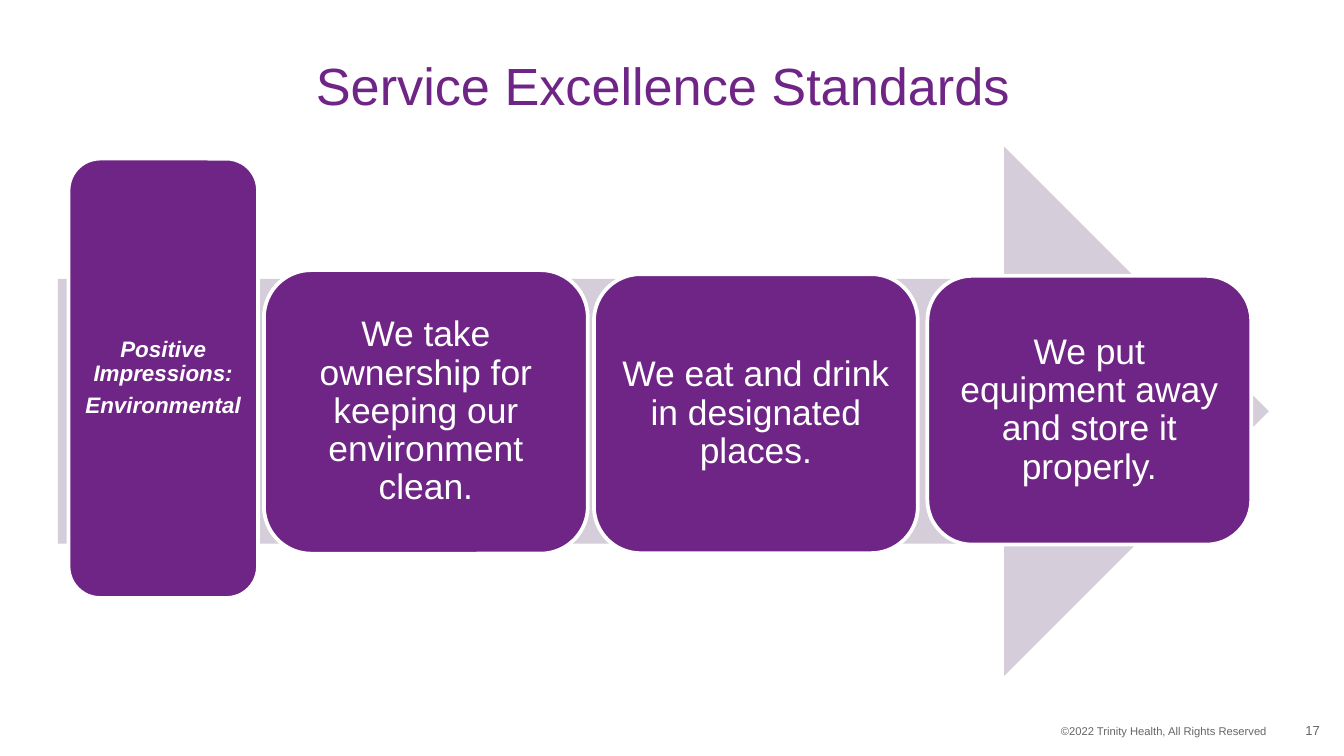
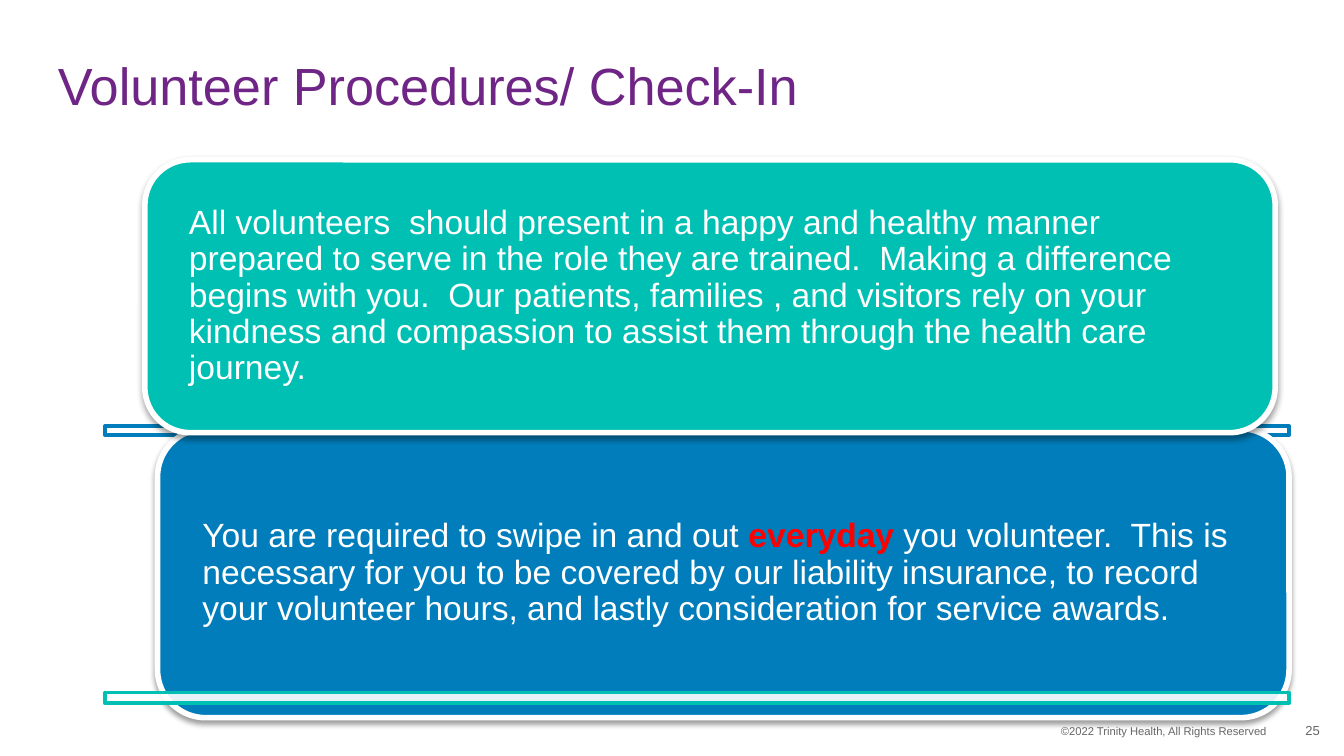
from dataclasses import dataclass

from lxml.etree import SubElement
from pptx import Presentation
from pptx.dml.color import RGBColor
from pptx.enum.shapes import MSO_SHAPE
from pptx.enum.text import MSO_ANCHOR, PP_ALIGN
from pptx.oxml.ns import qn
from pptx.util import Pt

FONT = "Arial"
PURPLE, LILAC, TEAL, BLUE = "6E2585", "D5CDD9", "00BFB3", "007DBA"
WHITE, GRAY, RED = "FFFFFF", "666666", "FF0000"


@dataclass
class Box:
    left: float
    top: float
    width: float
    height: float

    def lengths(self) -> tuple:
        return Pt(self.left), Pt(self.top), Pt(self.width), Pt(self.height)


@dataclass
class Style:
    size: float
    color: str = WHITE
    align: PP_ALIGN = PP_ALIGN.LEFT
    spacing: float = 1.0
    after: float = 0
    bold: bool = False
    italic: bool = False
    margins: tuple = (7.2, 3.6, 7.2, 3.6)
    anchor: MSO_ANCHOR = MSO_ANCHOR.MIDDLE


@dataclass
class Card:
    box: Box
    paragraphs: list
    style: Style
    fill: str = PURPLE
    border: float = 2
    shadow: bool = False


def rgb(value: str) -> RGBColor:
    return RGBColor.from_string(value)


def write(sp, paragraphs: list, style: Style) -> None:
    """Each paragraph is a string; parts between asterisks are stressed."""
    tf = sp.text_frame
    tf.word_wrap = True
    tf.vertical_anchor = style.anchor
    tf.margin_left, tf.margin_top, tf.margin_right, tf.margin_bottom = map(Pt, style.margins)
    for i, text in enumerate(paragraphs):
        p = tf.add_paragraph() if i else tf.paragraphs[0]
        p.alignment = style.align
        p.line_spacing = style.spacing
        p.space_after = Pt(style.after)
        p.font.name, p.font.size = FONT, Pt(style.size)
        p.font.bold, p.font.italic = style.bold, style.italic
        p.font.color.rgb = rgb(style.color)
        for j, part in enumerate(text.split("*")):
            r = p.add_run()
            r.text = part
            if j % 2:
                r.font.bold = True
                r.font.color.rgb = rgb(RED)


def add_text(s, box: Box, text: str, style: Style) -> None:
    write(s.shapes.add_textbox(*box.lengths()), [text], style)


def add_block(s, kind: MSO_SHAPE, box: Box, fill: str, line: str = "", weight: float = 2):
    sp = s.shapes.add_shape(kind, *box.lengths())
    sp.shadow.inherit = False
    sp.fill.solid()
    sp.fill.fore_color.rgb = rgb(fill)
    if line:
        sp.line.color.rgb = rgb(line)
        sp.line.width = Pt(weight)
    else:
        sp.line.fill.background()
    return sp


def set_alpha(color, percent: int) -> None:
    SubElement(color, qn("a:alpha"), val=str(percent * 1000))


def add_card(s, card: Card) -> None:
    sp = add_block(s, MSO_SHAPE.ROUNDED_RECTANGLE, card.box, card.fill, WHITE, card.border)
    write(sp, card.paragraphs, card.style)
    if card.shadow:
        effects = sp._element.spPr.find(qn("a:effectLst"))
        outer = SubElement(effects, qn("a:outerShdw"), blurRad=str(Pt(3.1)),
                           dist=str(Pt(1.6)), dir="5400000", rotWithShape="0")
        set_alpha(SubElement(outer, qn("a:srgbClr"), val="000000"), 38)


def add_bar(s, top: float, height: float, color: str) -> None:
    sp = add_block(s, MSO_SHAPE.RECTANGLE, Box(56.2, top, 634.3, height), WHITE, color)
    set_alpha(sp._element.spPr.find(qn("a:solidFill"))[0], 90)


def add_slide(prs, title: str, number: int, align: PP_ALIGN):
    """A blank slide with the shared title, copyright line and number."""
    s = prs.slides.add_slide(prs.slide_layouts[6])
    add_text(s, Box(31, 27.4, 648, 39.6), title,
             Style(28, PURPLE, align, 0.9, margins=(0, 0, 0, 0)))
    add_text(s, Box(383.8, 384.5, 301.7, 14.4), "©2022 Trinity Health, All Rights Reserved",
             Style(6, GRAY, PP_ALIGN.RIGHT, anchor=MSO_ANCHOR.TOP))
    add_text(s, Box(675.4, 380.2, 31.7, 21.6), str(number),
             Style(7, GRAY, PP_ALIGN.RIGHT, margins=(7.2, 3.6, 0, 3.6)))
    return s


def standards_slide(prs) -> None:
    s = add_slide(prs, "Service Excellence Standards", 17, PP_ALIGN.CENTER)
    add_block(s, MSO_SHAPE.RIGHT_ARROW, Box(31, 78.5, 648.7, 283.7), LILAC)

    # Heading card, then one card per standard
    heading = Style(12, align=PP_ALIGN.CENTER, spacing=0.9, after=4.2, bold=True,
                    italic=True, margins=(3.6,) * 4)
    standard = Style(19, align=PP_ALIGN.CENTER, spacing=0.9, margins=(5.7,) * 4)
    add_card(s, Card(Box(36.7, 85, 101.5, 235.4),
                     ["Positive Impressions:", "Environmental"], heading))
    for left, top, height, text in (
        (141.4, 144.7, 151.9, "We take ownership for keeping our environment clean."),
        (318.2, 146.9, 149.5, "We eat and drink in designated places."),
        (496.8, 147.8, 144, "We put equipment away and store it properly."),
    ):
        add_card(s, Card(Box(left, top, 173.5, height), [text], standard))


def check_in_slide(prs) -> None:
    s = add_slide(prs, "Volunteer Procedures/ Check-In", 25, PP_ALIGN.LEFT)
    body = Style(18, spacing=0.9, margins=(16.5, 0, 16.5, 0))
    swipe = ("You are required to swipe in and out *everyday *you volunteer.  This is "
             "necessary for you to be covered by our liability insurance, to record your "
             "volunteer hours, and lastly consideration for service awards.")
    manner = ("All volunteers  should present in a happy and healthy manner prepared to "
              "serve in the role they are trained.  Making a difference begins with you.  "
              "Our patients, families , and visitors rely on your kindness and compassion "
              "to assist them through the health care journey.")

    # The upper card overlaps the lower one, so it is drawn last
    add_bar(s, 228.2, 5, BLUE)
    add_card(s, Card(Box(84.4, 229.7, 606.2, 154.8), [swipe], body, BLUE, 3, True))
    add_bar(s, 371, 5.8, TEAL)
    add_card(s, Card(Box(77.6, 85.6, 605.5, 146.2), [manner], body, TEAL, 3, True))


def main() -> None:
    prs = Presentation()
    prs.slide_width, prs.slide_height = Pt(720), Pt(405)
    standards_slide(prs)
    check_in_slide(prs)
    prs.save("out.pptx")


if __name__ == "__main__":
    main()
